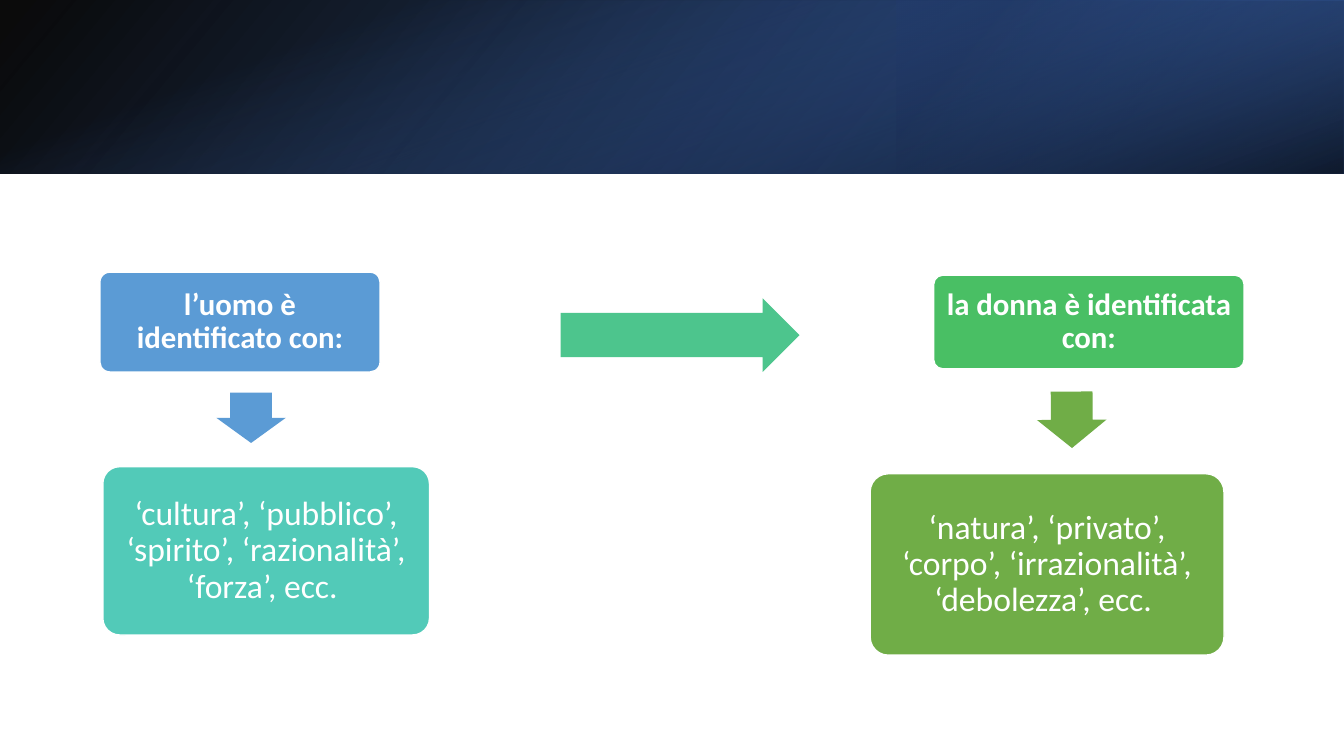
"""Slide contrasting what man and woman are each identified with, under a dark blue gradient band."""
import lxml.etree
import pptx
import pptx.dml.color
import pptx.enum.shapes
import pptx.enum.text
import pptx.oxml.ns
import pptx.util

PX = 9144
THEME = {
    "font": "Calibri", "heading": 22, "traits": 24, "white": "FFFFFF",
    "man": "5B9BD5", "man_traits": "52CAB8", "link": "4DC58D",
    "woman": "49BF64", "woman_traits": "70AD47",
    "black": "000000", "navy": "203864", "blue": "2F5597", "bright": "4472C4",
}
KINDS = pptx.enum.shapes.MSO_SHAPE


def rgb(name):
    return pptx.dml.color.RGBColor.from_string(THEME[name])


def place(kind, frame, rotation=0):
    shape = slide.shapes.add_shape(kind, *(length * PX for length in frame))
    shape.rotation = rotation
    shape.shadow.inherit = False
    shape.line.fill.background()
    return shape


deck = pptx.Presentation()
deck.slide_width, deck.slide_height = 1333 * PX, 750 * PX
slide = deck.slides.add_slide(deck.slide_layouts[6])

band_layers = [
    ((0, 0, 1333, 172), 0, True, 140, [(0, "black", 96), (100, "blue", 100)]),
    ((889, 0, 444, 172), 180, True, 320, [(19, "navy", 68), (100, "bright", 79)]),
    ((580, -580, 172, 1333), 90, False, 340, [(23, "bright", 0), (99, "black", 74)]),
]
for frame, rotation, mirrored, angle, stops in band_layers:
    layer = place(KINDS.RECTANGLE, frame, rotation)
    if mirrored:
        layer.element.spPr.find(pptx.oxml.ns.qn("a:xfrm")).set("flipH", "1")
    layer.fill.gradient()
    layer.fill.gradient_angle = 360 - angle
    for stop, (position, color, opacity) in zip(layer.fill.gradient_stops, stops):
        stop.position = position / 100
        stop.color.rgb = rgb(color)
    tints = layer.element.spPr.iter(pptx.oxml.ns.qn("a:srgbClr"))
    for tint, (position, color, opacity) in zip(list(tints), stops):
        alpha = lxml.etree.SubElement(tint, pptx.oxml.ns.qn("a:alpha"))
        alpha.set("val", str(opacity * 1000))

arrows = [
    ((224, 380, 50, 69), 90, "man"),
    ((556, 296, 237, 73), 0, "link"),
    ((1035, 382, 56, 69), 89.6, "woman_traits"),
]
for frame, rotation, color in arrows:
    arrow = place(KINDS.RIGHT_ARROW, frame, rotation)
    arrow.adjustments[0], arrow.adjustments[1] = 0.6, 0.5
    arrow.fill.solid()
    arrow.fill.fore_color.rgb = rgb(color)

cards = [
    ((99, 270, 278, 99), "man", "heading", 9, "l’uomo è identificato con:"),
    ((102, 463, 324, 167), "man_traits", "traits", 10,
     "‘cultura’, ‘pubblico’, ‘spirito’, ‘razionalità’, ‘forza’, ecc. "),
    ((926, 273, 308, 93), "woman", "heading", 9, "la donna è identificata con:"),
    ((863, 470, 351, 180), "woman_traits", "traits", 10,
     "‘natura’, ‘privato’, ‘corpo’, ‘irrazionalità’, ‘debolezza’, ecc. "),
]
for frame, color, level, margin, wording in cards:
    card = place(KINDS.ROUNDED_RECTANGLE, frame)
    card.adjustments[0] = 0.1
    card.fill.solid()
    card.fill.fore_color.rgb = rgb(color)
    card.line.color.rgb = rgb("white")
    card.line.width = pptx.util.Pt(1)
    body = card.text_frame
    body.word_wrap = True
    body.vertical_anchor = pptx.enum.text.MSO_ANCHOR.MIDDLE
    body.margin_left = body.margin_right = margin * PX
    body.margin_top = body.margin_bottom = margin * PX
    paragraph = body.paragraphs[0]
    paragraph.alignment = pptx.enum.text.PP_ALIGN.CENTER
    paragraph.line_spacing = 0.9
    run = paragraph.add_run()
    run.text = wording
    run.font.name = THEME["font"]
    run.font.size = pptx.util.Pt(THEME[level])
    run.font.bold = level == "heading"
    run.font.color.rgb = rgb("white")

deck.save("out.pptx")
